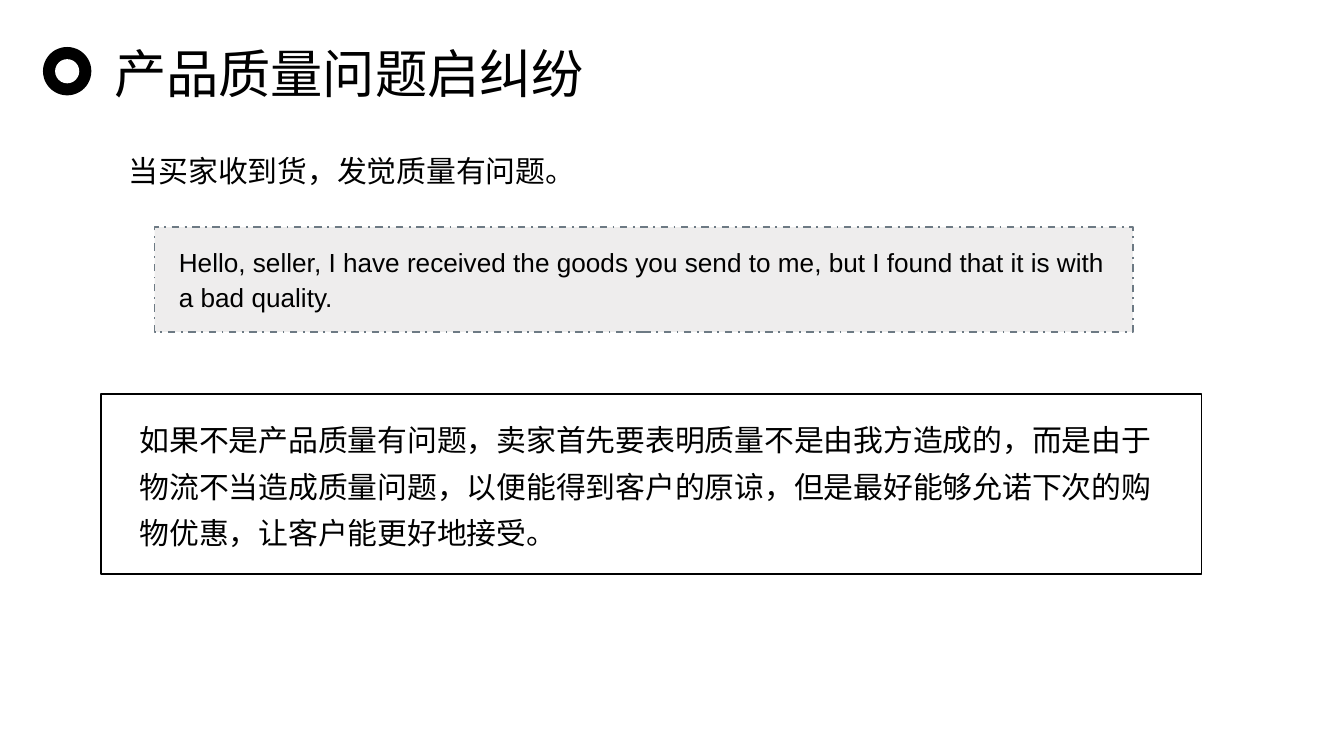
"""Build a slide on a dispute over product quality."""
from dataclasses import dataclass
from typing import Optional

from lxml.etree import SubElement
from pptx import Presentation
from pptx.dml.color import RGBColor
from pptx.enum.dml import MSO_LINE
from pptx.enum.shapes import MSO_SHAPE
from pptx.enum.text import MSO_ANCHOR, MSO_AUTO_SIZE, PP_ALIGN
from pptx.oxml.ns import qn
from pptx.util import Inches, Pt

BLACK, WHITE, GREY, SLATE = "000000", "FFFFFF", "EEEDED", "6D7A84"
HAN = "Noto Sans CJK SC"


@dataclass
class Block:
    kind: MSO_SHAPE
    box: tuple
    fill: Optional[str] = None
    line: Optional[str] = None
    dash: Optional[MSO_LINE] = None


@dataclass
class Label:
    text: str
    box: tuple
    size: int = 16
    font: str = HAN
    space: float = 1.3
    inset: tuple = (0.1, 0.05)
    wrap: bool = True


BLOCKS = [
    Block(MSO_SHAPE.OVAL, (0.32, 0.35, 0.36, 0.36), BLACK),
    Block(MSO_SHAPE.OVAL, (0.41, 0.44, 0.18, 0.18), WHITE),
    Block(MSO_SHAPE.RECTANGLE, (1.15, 1.69, 7.28, 0.78), GREY, SLATE,
          MSO_LINE.DASH_DOT),
    Block(MSO_SHAPE.RECTANGLE, (0.75, 2.93, 8.19, 1.34), line=BLACK),
]
TITLE = Label("产品质量问题启纠纷", (0.75, 0.26, 3.7, 0.57), 28, space=1,
              wrap=False)
LABELS = [
    Label("当买家收到货，发觉质量有问题。", (0.86, 1.01, 4.12, 0.45)),
    Label("Hello, seller, I have received the goods you send to me, "
          "but I found that it is with a bad quality.",
          (1.24, 1.77, 7.08, 0.61), 14, "Arial", 1.1, (0.09, 0.04)),
    Label("如果不是产品质量有问题，卖家首先要表明质量不是由我方造成的，"
          "而是由于物流不当造成质量问题，以便能得到客户的原谅，"
          "但是最好能够允诺下次的购物优惠，让客户能更好地接受。",
          (0.94, 3.01, 7.8, 1.15)),
]


def paint(form, color: str) -> None:
    """Give a fill or a font a solid colour."""
    form.solid()
    form.fore_color.rgb = RGBColor.from_string(color)


def draw(slide, block: Block) -> None:
    """Draw one plain shape."""
    shape = slide.shapes.add_shape(block.kind, *map(Inches, block.box))
    shape.shadow.inherit = False
    if block.fill:
        paint(shape.fill, block.fill)
    else:
        shape.fill.background()
    if block.line:
        paint(shape.line.fill, block.line)
        shape.line.width = Pt(1)
        shape.line.dash_style = block.dash
    else:
        shape.line.fill.background()


def write(shape, label: Label) -> None:
    """Place a text shape and format its words."""
    shape.left, shape.top, shape.width, shape.height = map(Inches, label.box)
    frame = shape.text_frame
    frame.text = label.text
    frame.word_wrap = label.wrap
    frame.auto_size = MSO_AUTO_SIZE.SHAPE_TO_FIT_TEXT
    frame.vertical_anchor = MSO_ANCHOR.TOP
    frame.margin_left = frame.margin_right = Inches(label.inset[0])
    frame.margin_top = frame.margin_bottom = Inches(label.inset[1])
    para = frame.paragraphs[0]
    para.alignment = PP_ALIGN.LEFT
    para.line_spacing = label.space
    for run in para.runs:
        run.font.size = Pt(label.size)
        run.font.name = label.font
        paint(run.font.fill, BLACK)
        SubElement(run.font._element, qn("a:ea"), typeface=label.font)


def main() -> None:
    """Build and save the slide."""
    deck = Presentation()
    deck.slide_width = Inches(10)
    deck.slide_height = deck.slide_width * 9 // 16
    slide = deck.slides.add_slide(deck.slide_layouts[5])
    write(slide.shapes.title, TITLE)
    for block in BLOCKS:
        draw(slide, block)
    for label in LABELS:
        area = map(Inches, label.box)
        write(slide.shapes.add_textbox(*area), label)
    deck.save("out.pptx")


if __name__ == "__main__":
    main()
